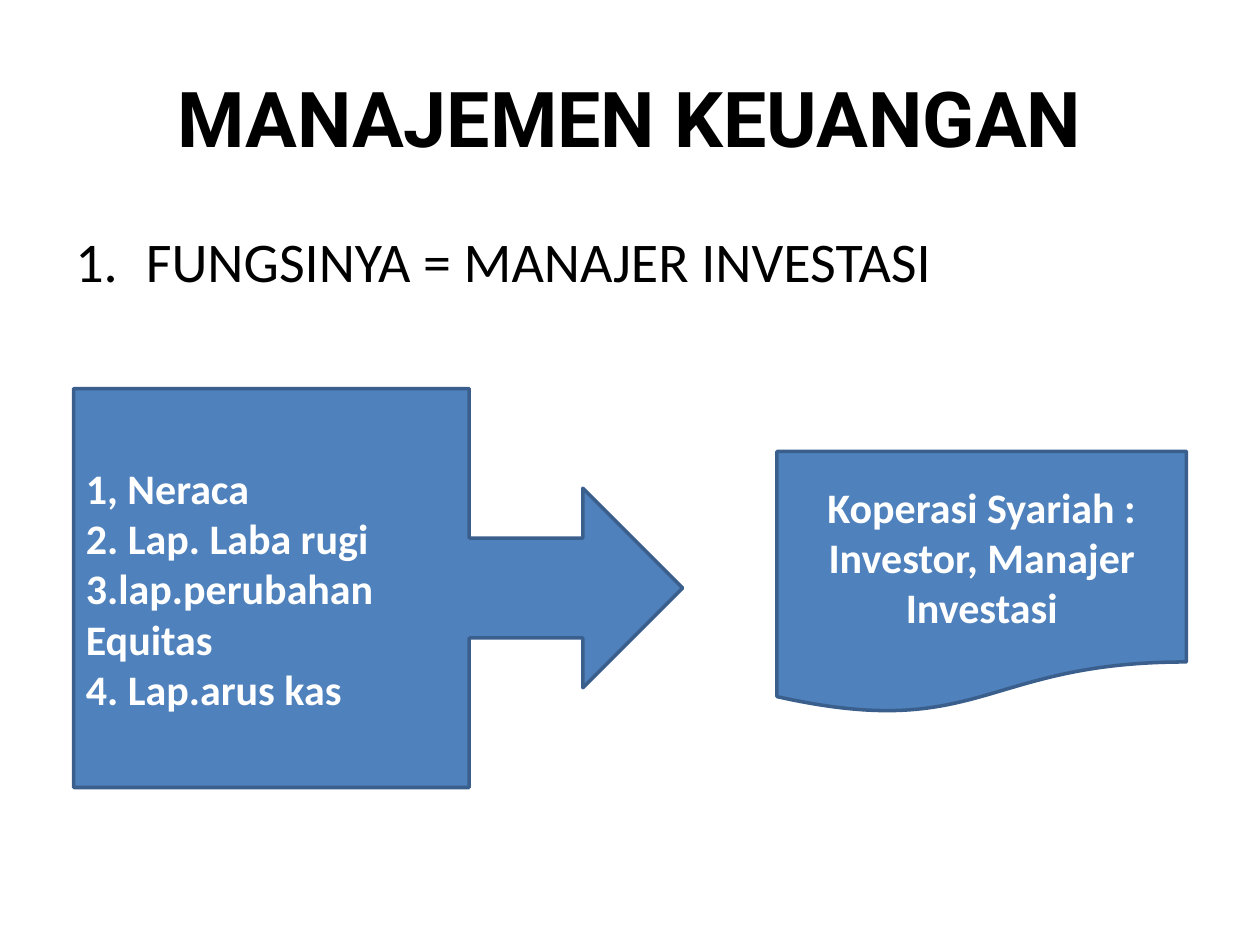
"""Build the financial management slide: its function, the reports and the investor."""
from dataclasses import dataclass

from lxml.etree import SubElement
from pptx import Presentation
from pptx.dml.color import RGBColor
from pptx.enum.shapes import MSO_SHAPE
from pptx.enum.text import MSO_ANCHOR, PP_ALIGN
from pptx.oxml.ns import qn
from pptx.util import Inches, Pt


@dataclass(frozen=True)
class Theme:
    ink: RGBColor = RGBColor.from_string("000000")
    paper: RGBColor = RGBColor.from_string("FFFFFF")
    panel: RGBColor = RGBColor.from_string("4F81BD")
    outline: RGBColor = RGBColor.from_string("3A5F8C")
    title_font: str = "Roboto"
    body_font: str = "Calibri"
    title_size: int = 44
    body_size: int = 32
    panel_size: int = 24
    outline_width: int = 2


THEME = Theme()
COLUMNS, ROWS = 120, 90

deck = Presentation()
deck.slide_width, deck.slide_height = Inches(10), Inches(7.5)
slide = deck.slides.add_slide(deck.slide_layouts[6])


def cells(left, top, width, height):
    column, row = deck.slide_width / COLUMNS, deck.slide_height / ROWS
    return [round(n * unit) for n, unit in zip((left, top, width, height), (column, row) * 2)]


def write(holder, lines, font, size, color, bold, align, anchor):
    frame = holder.text_frame
    frame.word_wrap = True
    frame.vertical_anchor = anchor
    for index, line in enumerate(lines):
        paragraph = frame.add_paragraph() if index else frame.paragraphs[0]
        paragraph.alignment = align
        run = paragraph.add_run()
        run.text = line
        run.font.name, run.font.size, run.font.bold = font, Pt(size), bold
        run.font.color.rgb = color
    return frame


title = slide.shapes.add_textbox(*cells(6, 3.6, 108, 15))
write(title, ["MANAJEMEN KEUANGAN"], THEME.title_font, THEME.title_size,
      THEME.ink, True, PP_ALIGN.CENTER, MSO_ANCHOR.MIDDLE)

function_list = slide.shapes.add_textbox(*cells(6, 21, 108, 59.4))
function_text = write(function_list, ["FUNGSINYA = MANAJER INVESTASI"], THEME.body_font,
                      THEME.body_size, THEME.ink, False, PP_ALIGN.LEFT, MSO_ANCHOR.TOP)
function_item = function_text.paragraphs[0]
function_item.space_before = Pt(0.2 * THEME.body_size)
numbering = function_item._p.get_or_add_pPr()
numbering.set("marL", str(Inches(0.56)))
numbering.set("indent", str(-Inches(0.56)))
SubElement(numbering, qn("a:buFont"), typeface="+mj-lt")
SubElement(numbering, qn("a:buAutoNum"), type="arabicPeriod")

reports = ["1, Neraca", "2. Lap. Laba rugi", "3.lap.perubahan Equitas", "4. Lap.arus kas"]
investor = ["Koperasi Syariah : Investor, Manajer Investasi"]
panels = [
    (MSO_SHAPE.RIGHT_ARROW_CALLOUT, (7, 37, 58, 38), reports, PP_ALIGN.LEFT),
    (MSO_SHAPE.FLOWCHART_DOCUMENT, (74, 43, 39, 25), investor, PP_ALIGN.CENTER),
]
for outline, place, lines, align in panels:
    panel = slide.shapes.add_shape(outline, *cells(*place))
    panel.shadow.inherit = False
    panel.fill.solid()
    panel.fill.fore_color.rgb = THEME.panel
    panel.line.color.rgb = THEME.outline
    panel.line.width = Pt(THEME.outline_width)
    write(panel, lines, THEME.body_font, THEME.panel_size, THEME.paper, True,
          align, MSO_ANCHOR.MIDDLE)

deck.save("out.pptx")
